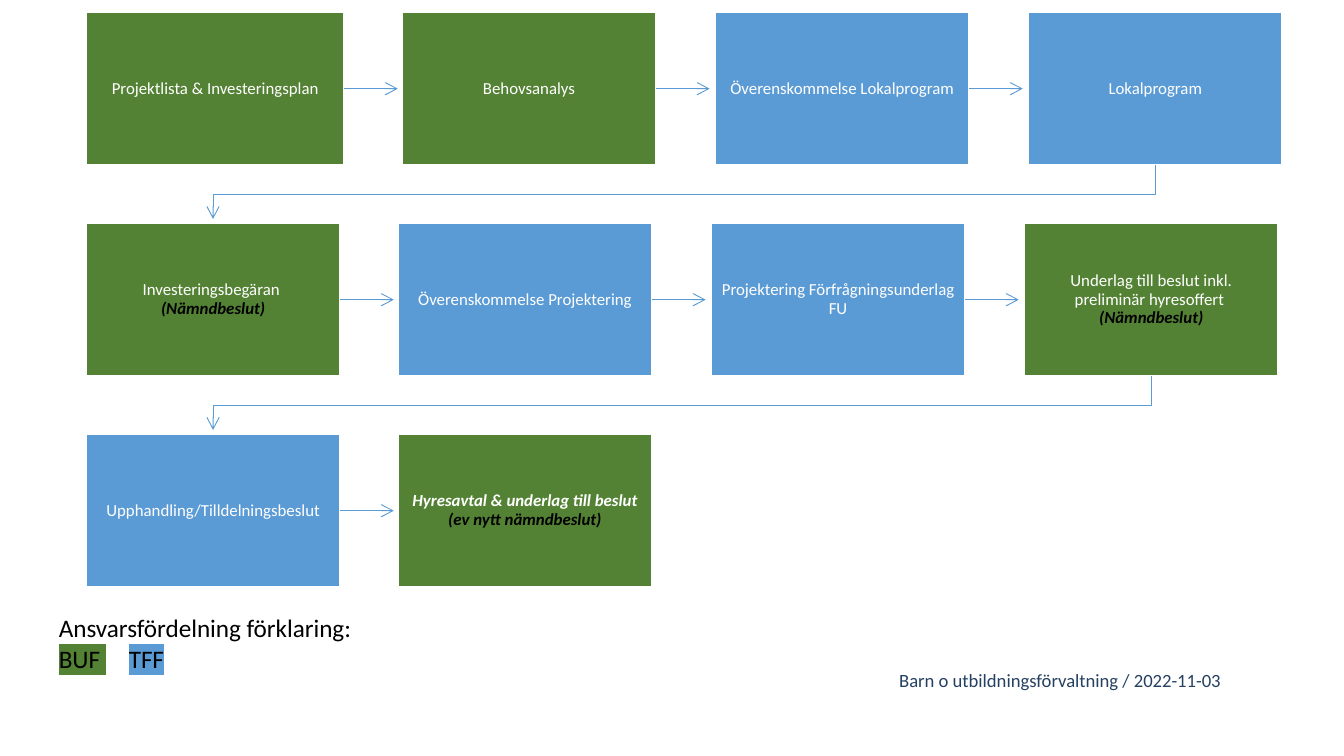
from lxml.etree import SubElement
from pptx import Presentation
from pptx.dml.color import RGBColor
from pptx.enum.shapes import MSO_CONNECTOR, MSO_SHAPE
from pptx.enum.text import MSO_ANCHOR, PP_ALIGN
from pptx.oxml import parse_xml
from pptx.oxml.ns import nsdecls, qn
from pptx.util import Inches, Pt

COLORS = {"BUF": "548235", "TFF": "5B9BD5", "arrow": "5B9BD5",
          "white": "FFFFFF", "black": "000000", "footer": "254061"}
FONT = "Calibri"

ROWS = [
    {"second_left": 2.99, "steps": [
        ("BUF", "Projektlista & Investeringsplan", ""),
        ("BUF", "Behovsanalys", ""),
        ("TFF", "Överenskommelse Lokalprogram", ""),
        ("TFF", "Lokalprogram", "")]},
    {"second_left": 2.96, "steps": [
        ("BUF", "Investeringsbegäran ", "(Nämndbeslut)"),
        ("TFF", "Överenskommelse Projektering", ""),
        ("TFF", "Projektering Förfrågningsunderlag FU", ""),
        ("BUF", "Underlag till beslut inkl. preliminär hyresoffert ", "(Nämndbeslut)")]},
    {"second_left": 2.96, "steps": [
        ("TFF", "Upphandling/Tilldelningsbeslut", ""),
        ("BUF", "Hyresavtal & underlag till beslut", "(ev nytt nämndbeslut)")]},
]
EMPHASIZED = {"Hyresavtal & underlag till beslut"}
LEGEND_TITLE = "Ansvarsfördelning förklaring:"
LEGEND = [("BUF ", "BUF"), ("\t", None), ("TFF", "TFF")]
FOOTER = "Barn o utbildningsförvaltning / 2022-11-03"

LEFT, TOP = 0.64, 0.09
BOX_WIDTH, BOX_HEIGHT = 1.89, 1.14
COLUMN_STEP, ROW_STEP = 2.33, 1.57
GAP, ARROW_LENGTH = 0.43, 0.4
TURN_DROP, TURN_END = 0.22, 0.4


def rgb(name):
    return RGBColor.from_string(COLORS[name])


def add_span(paragraph, text, size, color, strong=False):
    span = paragraph.add_run()
    span.text = text
    span.font.name = FONT
    span.font.size = Pt(size)
    span.font.color.rgb = rgb(color)
    if strong:
        span.font.bold = span.font.italic = True
    return span


def highlight(span, color):
    mark = parse_xml(f'<a:highlight {nsdecls("a")}>'
                     f'<a:srgbClr val="{COLORS[color]}"/></a:highlight>')
    span.font._element.find(qn("a:solidFill")).addnext(mark)


def style_arrow(arrow):
    arrow.line.color.rgb = rgb("arrow")
    arrow.line.width = Pt(0.5)
    SubElement(arrow.line._get_or_add_ln(), qn("a:tailEnd"), type="arrow")


def add_arrow(page, left, y):
    arrow = page.shapes.add_connector(
        MSO_CONNECTOR.STRAIGHT, Inches(left), Inches(y),
        Inches(left + ARROW_LENGTH), Inches(y))
    style_arrow(arrow)
    SubElement(arrow._element.spPr, qn("a:effectLst"))


def add_turn(page, start_x, end_x, y):
    points = [(start_x, y + TURN_DROP), (end_x, y + TURN_DROP), (end_x, y + TURN_END)]
    builder = page.shapes.build_freeform(Inches(start_x), Inches(y))
    builder.add_line_segments([(Inches(px), Inches(py)) for px, py in points], close=False)
    turn = builder.convert_to_shape()
    turn.fill.background()
    turn.shadow.inherit = False
    style_arrow(turn)


def add_step(page, left, top, width, step):
    owner, label, decision = step
    box = page.shapes.add_shape(MSO_SHAPE.RECTANGLE, Inches(left), Inches(top),
                                Inches(width), Inches(BOX_HEIGHT))
    box.shadow.inherit = False
    box.fill.solid()
    box.fill.fore_color.rgb = rgb(owner)
    box.line.color.rgb = rgb("white")
    box.line.width = Pt(1)
    frame = box.text_frame
    frame.word_wrap = True
    frame.vertical_anchor = MSO_ANCHOR.MIDDLE
    frame.margin_left = frame.margin_right = Inches(0.07)
    frame.margin_top = frame.margin_bottom = Inches(0.07)
    paragraph = frame.paragraphs[0]
    paragraph.alignment = PP_ALIGN.CENTER
    paragraph.line_spacing = 0.9
    add_span(paragraph, label, 9, "white", label in EMPHASIZED)
    if decision:
        paragraph.add_line_break()
        add_span(paragraph, decision, 9, "black", True)


def add_row(page, index, row):
    top = TOP + index * ROW_STEP
    last = len(row["steps"]) - 1
    for column, step in enumerate(row["steps"]):
        if column == 0:
            left, width = LEFT, row["second_left"] - GAP - LEFT
        else:
            left, width = row["second_left"] + (column - 1) * COLUMN_STEP, BOX_WIDTH
        add_step(page, left, top, width, step)
        if column < last:
            add_arrow(page, left + width, top + BOX_HEIGHT / 2)
        elif index < len(ROWS) - 1:
            add_turn(page, left + width / 2, LEFT + BOX_WIDTH / 2, top + BOX_HEIGHT)


def add_text_box(page, left, top, width, height):
    box = page.shapes.add_textbox(Inches(left), Inches(top), Inches(width), Inches(height))
    box.text_frame.word_wrap = True
    return box.text_frame


def add_legend(page):
    frame = add_text_box(page, 0.34, 4.51, 3.13, 0.56)
    add_span(frame.paragraphs[0], LEGEND_TITLE, 13.5, "black")
    paragraph = frame.add_paragraph()
    tabs = SubElement(paragraph._p.get_or_add_pPr(), qn("a:tabLst"))
    SubElement(tabs, qn("a:tab"), pos=str(Inches(0.52)), algn="l")
    for text, owner in LEGEND:
        span = add_span(paragraph, text, 13.5, "black")
        if owner:
            highlight(span, owner)


def add_footer(page):
    frame = add_text_box(page, 5.24, 4.92, 3.94, 0.27)
    frame.vertical_anchor = MSO_ANCHOR.BOTTOM
    paragraph = frame.paragraphs[0]
    paragraph.alignment = PP_ALIGN.RIGHT
    add_span(paragraph, FOOTER, 10, "footer")


def main():
    deck = Presentation()
    deck.slide_width = Inches(10)
    deck.slide_height = deck.slide_width * 9 // 16
    page = deck.slides.add_slide(deck.slide_layouts[6])
    add_footer(page)
    for index, row in enumerate(ROWS):
        add_row(page, index, row)
    add_legend(page)
    deck.save("out.pptx")


if __name__ == "__main__":
    main()
